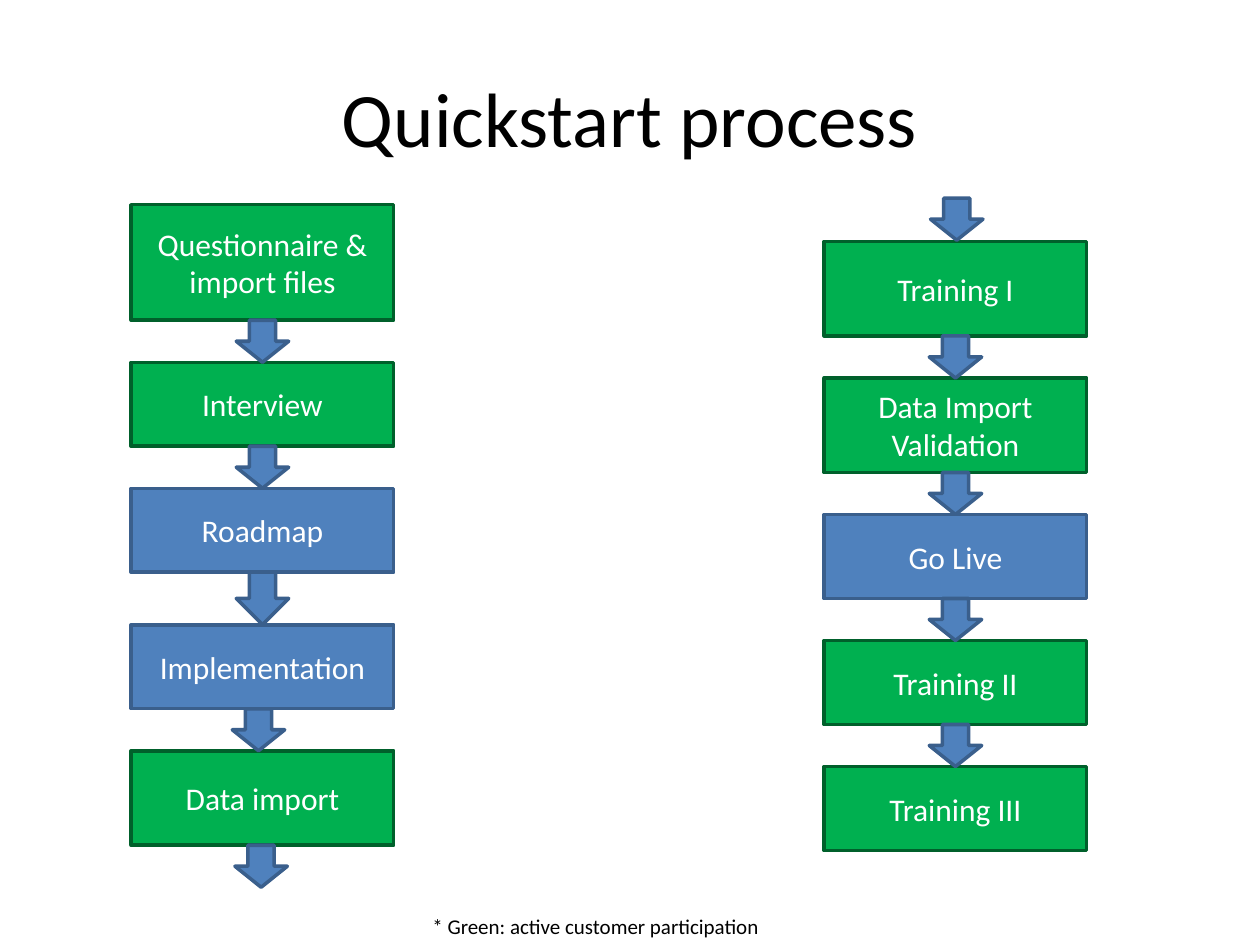
from dataclasses import dataclass

from pptx import Presentation
from pptx import util as u
from pptx.dml.color import RGBColor
from pptx.enum import shapes, text

SCALE = 914400 // 96


@dataclass(frozen=True)
class Theme:
    font: str = "Calibri"
    black: str = "000000"
    white: str = "FFFFFF"
    blue: tuple = ("4F81BD", "3A5F8C")
    green: tuple = ("00B050", "00602B")
    title: int = 44
    body: int = 18
    note: int = 12
    line: int = 2


@dataclass(frozen=True)
class Step:
    label: str
    high: int = 64
    green: bool = True
    gap: int = 32
    shift: int = 0


@dataclass(frozen=True)
class Column:
    left: int
    top: int
    steps: tuple


THEME = Theme()
WIDE = 200
ARROW = 40
COLUMNS = (
    Column(100, 156, (
        Step("Questionnaire & import files", high=88),
        Step("Interview"),
        Step("Roadmap", green=False, gap=40),
        Step("Implementation", green=False, shift=-3),
        Step("Data import", high=72, shift=-1),
    )),
    Column(628, 184, (
        Step("Training I", high=72),
        Step("Data Import Validation", high=72),
        Step("Go Live", green=False),
        Step("Training II"),
        Step("Training III", gap=0),
    )),
)


def px(*sizes: int) -> list:
    return [u.Emu(size * SCALE) for size in sizes]


def write(shape, words: str, *, size: int, color: str,
          align=text.PP_ALIGN.CENTER, anchor=text.MSO_ANCHOR.MIDDLE) -> None:
    frame = shape.text_frame
    frame.word_wrap = True
    frame.vertical_anchor = anchor
    para = frame.paragraphs[0]
    para.alignment = align
    run = para.add_run()
    run.text = words
    run.font.name = THEME.font
    run.font.size = u.Pt(size)
    run.font.color.rgb = RGBColor.from_string(color)


def draw(slide, kind, box: tuple, paint: tuple):
    shape = slide.shapes.add_shape(kind, *px(*box))
    fill, line = paint
    shape.shadow.inherit = False
    shape.fill.solid()
    shape.fill.fore_color.rgb = RGBColor.from_string(fill)
    shape.line.color.rgb = RGBColor.from_string(line)
    shape.line.width = u.Pt(THEME.line)
    return shape


def arrow(slide, mid: int, top: int, high: int) -> None:
    box = (mid - ARROW // 2, top, ARROW, high)
    draw(slide, shapes.MSO_SHAPE.DOWN_ARROW, box, THEME.blue)


def flow(slide, column: Column) -> None:
    top = column.top
    arrows = []
    for step in column.steps:
        paint = THEME.green if step.green else THEME.blue
        box = (column.left, top, WIDE, step.high)
        shape = draw(slide, shapes.MSO_SHAPE.RECTANGLE, box, paint)
        write(shape, step.label, size=THEME.body, color=THEME.white)
        top += step.high
        if step.gap:
            arrows.append((column.left + WIDE // 2 + step.shift, top, step.gap))
        top += step.gap
    for place in arrows:
        arrow(slide, *place)


def main() -> None:
    deck = Presentation()
    deck.slide_width, deck.slide_height = px(960, 720)
    slide = deck.slides.add_slide(deck.slide_layouts[5])

    title = slide.shapes.title
    title.left, title.top, title.width, title.height = px(48, 29, 864, 120)
    write(title, "Quickstart process", size=THEME.title, color=THEME.black)

    for column in COLUMNS:
        flow(slide, column)
    arrow(slide, 729, 151, 32)

    note = slide.shapes.add_textbox(*px(320, 691, 272, 29))
    write(note, "* Green: active customer participation", size=THEME.note,
          color=THEME.black, align=text.PP_ALIGN.LEFT, anchor=text.MSO_ANCHOR.TOP)
    note.text_frame.auto_size = text.MSO_AUTO_SIZE.SHAPE_TO_FIT_TEXT

    deck.save("out.pptx")


if __name__ == "__main__":
    main()
